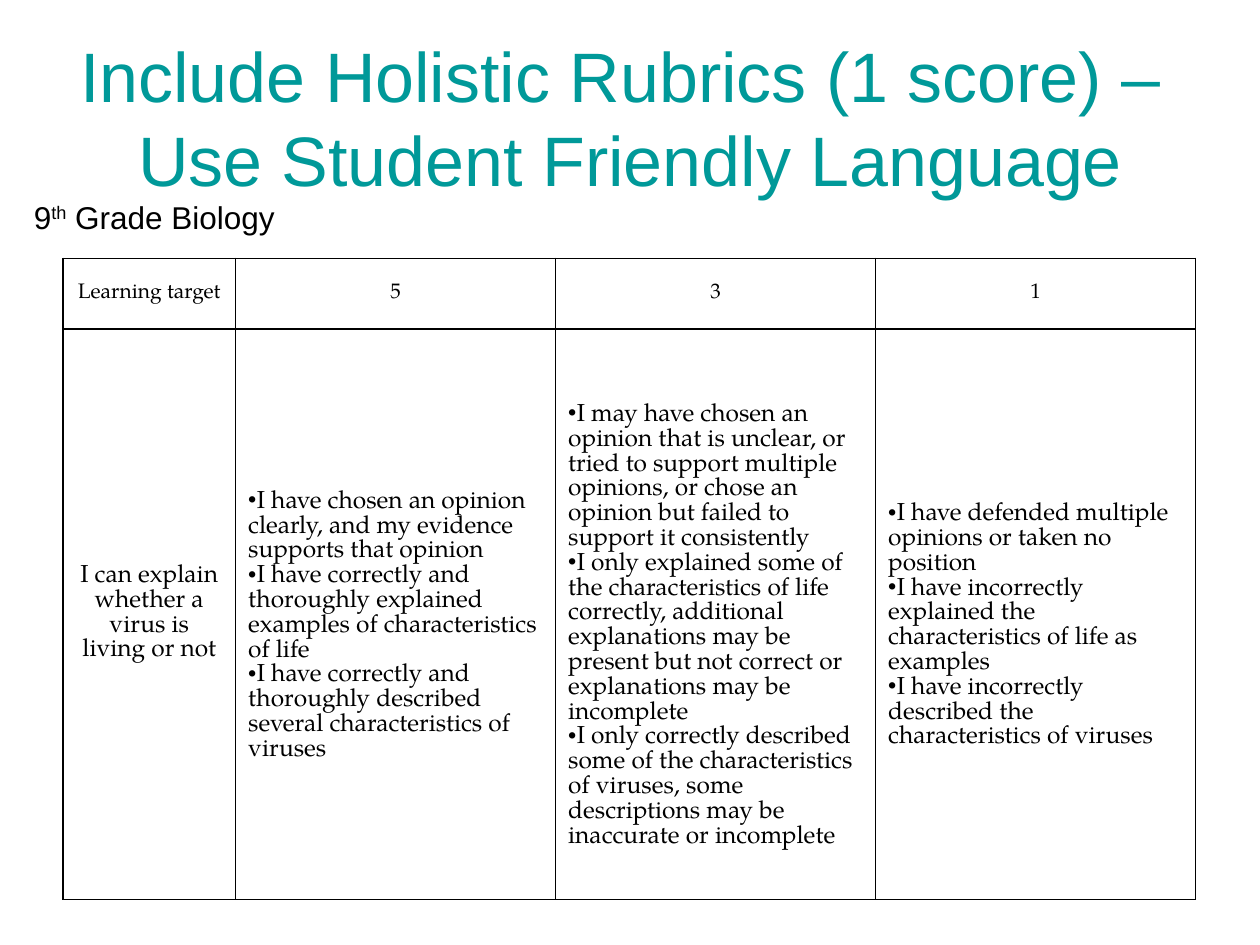
from lxml import etree
from pptx import Presentation
from pptx.dml.color import RGBColor
from pptx.enum.text import MSO_ANCHOR, MSO_AUTO_SIZE, PP_ALIGN
from pptx.oxml.ns import qn
from pptx.util import Inches, Pt

MIDDLE = MSO_ANCHOR.MIDDLE
CENTER, LEFT = PP_ALIGN.CENTER, PP_ALIGN.LEFT
NO_FIT = MSO_AUTO_SIZE.NONE
FIT_SHAPE = MSO_AUTO_SIZE.SHAPE_TO_FIT_TEXT
SANS, SERIF = "Arial", "TeX Gyre Pagella"
TEAL, BLACK, WHITE = "009999", "000000", "FFFFFF"
COL_WIDTHS = [1.37, 2.54, 2.54, 2.54]
ROW_HEIGHTS = [0.56, 4.53]
HEADINGS = ["Learning target", "5", "3", "1"]
TARGET = "I can explain whether a virus is living or not"
CRITERIA = [
    ["I have chosen an opinion clearly, and my evidence supports that opinion",
     "I have correctly and thoroughly explained examples of characteristics of life",
     "I have correctly and thoroughly described several characteristics of viruses"],
    ["I may have chosen an opinion that is unclear, or tried to support multiple "
     "opinions, or chose an opinion but failed to support it consistently",
     "I only explained some of the characteristics of life correctly, additional "
     "explanations may be present but not correct or explanations may be incomplete",
     "I only correctly described some of the characteristics of viruses, some "
     "descriptions may be inaccurate or incomplete"],
    ["I have defended multiple opinions or taken no position",
     "I have incorrectly explained the characteristics of life as examples",
     "I have incorrectly described the characteristics of viruses"],
]


def rgb(value):
    """Turn a hex string into a colour."""
    return RGBColor.from_string(value)


def add_text(p, text, size=14, font=SERIF, color=BLACK, align=LEFT,
             baseline=None, bullet=None):
    """Add formatted text to a paragraph."""
    p.alignment = align
    for i, line in enumerate(text.split("\n")):
        if i:
            p.add_line_break()
        r = p.add_run()
        r.text = line
        r.font.size = Pt(size)
        r.font.name = font
        r.font.color.rgb = rgb(color)
        if baseline:
            r._r.get_or_add_rPr().set("baseline", str(baseline * 1000))
    if bullet:
        pPr = p._p.get_or_add_pPr()
        pPr.set("marL", "0")
        pPr.set("indent", "0")
        etree.SubElement(pPr, qn("a:buChar"), char=bullet)


def set_borders(cell, color=BLACK, width=1):
    """Draw a line on each side of a cell."""
    tcPr = cell._tc.get_or_add_tcPr()
    for i, side in enumerate(("lnL", "lnR", "lnT", "lnB")):
        ln = etree.Element(qn(f"a:{side}"), w=str(Pt(width)))
        fill = etree.SubElement(ln, qn("a:solidFill"))
        etree.SubElement(fill, qn("a:srgbClr"), val=color)
        tcPr.insert(i, ln)


def add_title(s, x, y, w, h):
    """Place the slide title."""
    sp = s.shapes.title
    sp.left, sp.top, sp.width, sp.height = map(Inches, (x, y, w, h))
    tf = sp.text_frame
    tf.auto_size = NO_FIT
    tf.vertical_anchor = MIDDLE
    add_text(tf.paragraphs[0],
             "Include Holistic Rubrics (1 score) – \nUse Student Friendly Language",
             size=40, font=SANS, color=TEAL, align=CENTER)


def add_course(s, x, y, w, h):
    """Place the course name above the rubric."""
    sp = s.shapes.add_textbox(*map(Inches, (x, y, w, h)))
    tf = sp.text_frame
    tf.word_wrap = False
    tf.auto_size = FIT_SHAPE
    p = tf.paragraphs[0]
    for text, baseline in (("9", None), ("th", 30), (" Grade Biology", None)):
        add_text(p, text, size=18, font=SANS, baseline=baseline)


def add_rubric(s, x, y, w, h):
    """Place the rubric table."""
    frame = s.shapes.add_table(len(ROW_HEIGHTS), len(COL_WIDTHS),
                               *map(Inches, (x, y, w, h)))
    table = frame.table
    table.first_row = table.horz_banding = False
    for col, width in zip(table.columns, COL_WIDTHS):
        col.width = Inches(width)
    for row, height in zip(table.rows, ROW_HEIGHTS):
        row.height = Inches(height)
    for cell in table.iter_cells():
        cell.fill.solid()
        cell.fill.fore_color.rgb = rgb(WHITE)
        cell.vertical_anchor = MIDDLE
        set_borders(cell)
    for c, heading in enumerate(HEADINGS):
        add_text(table.cell(0, c).text_frame.paragraphs[0], heading,
                 size=12, align=CENTER)
    add_text(table.cell(1, 0).text_frame.paragraphs[0], TARGET, align=CENTER)
    for c, criteria in enumerate(CRITERIA, start=1):
        cell = table.cell(1, c)
        cell.margin_top = Inches(0.25)
        tf = cell.text_frame
        for i, text in enumerate(criteria):
            p = tf.add_paragraph() if i else tf.paragraphs[0]
            add_text(p, text, bullet="•")


def main():
    """Build the slide and save it."""
    prs = Presentation()
    prs.slide_width, prs.slide_height = Inches(10), Inches(7.5)
    s = prs.slides.add_slide(prs.slide_layouts[5])
    add_title(s, 0.5, 0.3, 9, 1.25)
    add_course(s, 0.17, 1.52, 2.17, 0.4)
    add_rubric(s, 0.5, 2.05, sum(COL_WIDTHS), sum(ROW_HEIGHTS))
    prs.save("out.pptx")


if __name__ == "__main__":
    main()
